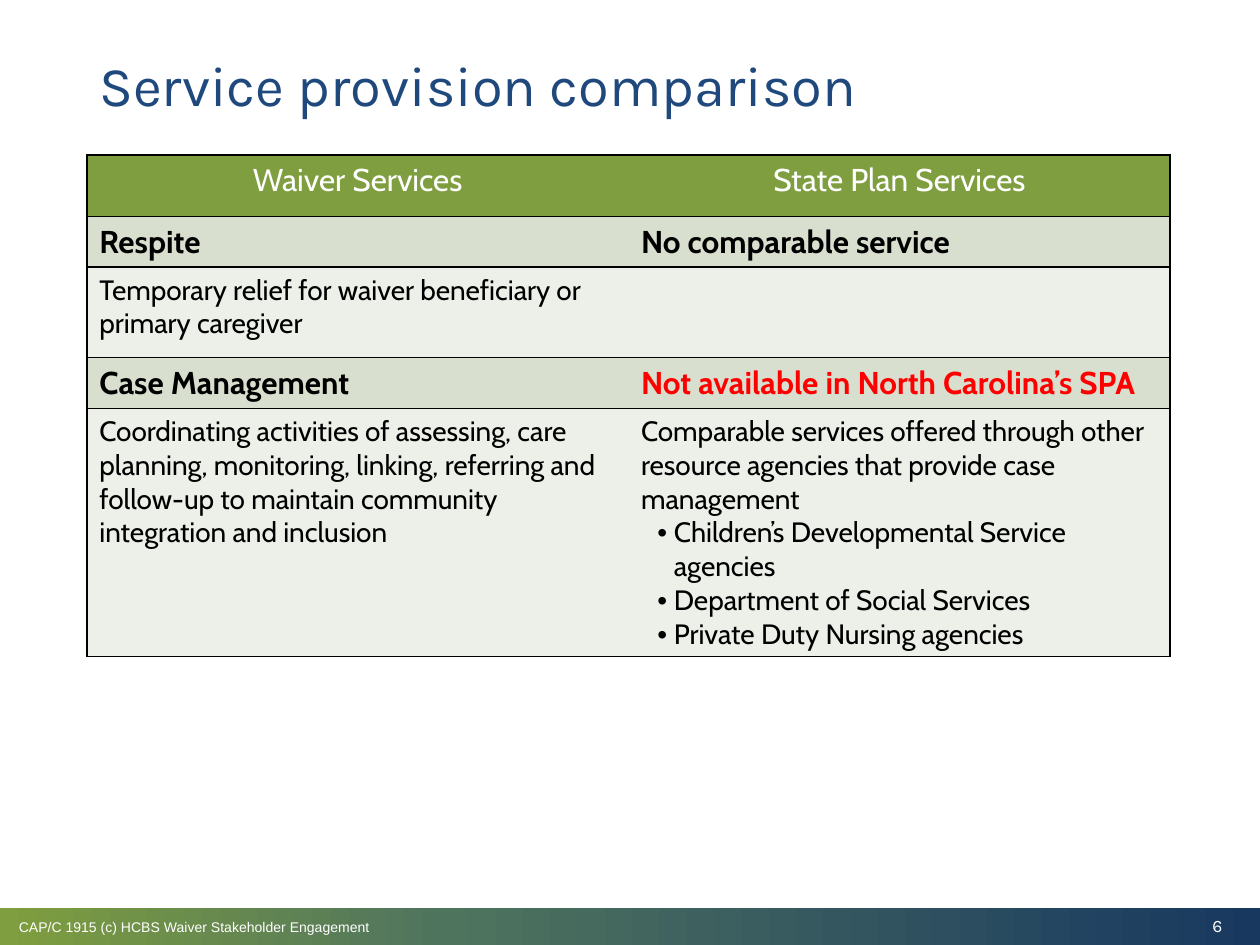
from copy import deepcopy
from dataclasses import dataclass

from lxml import etree
from pptx import Presentation
from pptx.dml.color import RGBColor
from pptx.enum import shapes, text
from pptx.oxml import ns
from pptx.util import Cm, Pt


@dataclass(frozen=True)
class Theme:
    white: str = "FFFFFF"
    black: str = "000000"
    red: str = "FF0000"
    blue: str = "1F497D"
    green: str = "7F9E3F"
    sage: str = "D8DFCF"
    pale: str = "ECF0E8"
    fade: tuple = ((0, "7F9E3F"), (0.35, "4F745E"), (1, "183860"))
    head: str = "Karla"
    body: str = "Cabin"
    foot: str = "Arial"
    title: int = 32
    large: int = 18
    small: int = 16
    page: int = 10
    note: int = 8


T = Theme()


@dataclass(frozen=True)
class Style:
    size: int
    font: str
    color: str
    bold: bool = False


@dataclass(frozen=True)
class Line:
    words: str
    style: Style
    align: text.PP_ALIGN = text.PP_ALIGN.LEFT
    bullet: bool = False


@dataclass(frozen=True)
class Row:
    height: float
    fill: str
    cells: tuple


@dataclass(frozen=True)
class Label:
    box: tuple
    line: Line
    anchor: text.MSO_ANCHOR


HEAD = Style(T.large, T.body, T.white)
NAME = Style(T.large, T.body, T.black, True)
ALERT = Style(T.large, T.body, T.red, True)
BODY = Style(T.small, T.body, T.black)
MID = text.PP_ALIGN.CENTER

ROWS = (
    Row(1.24, T.green, ((Line("Waiver Services", HEAD, MID),),
                        (Line("State Plan Services", HEAD, MID),))),
    Row(1.02, T.sage, ((Line("Respite", NAME),),
                       (Line("No comparable service", NAME),))),
    Row(1.83, T.pale, ((Line("Temporary relief for waiver beneficiary or primary caregiver", BODY),),
                       ())),
    Row(1.02, T.sage, ((Line("Case Management", NAME),),
                       (Line("Not available in North Carolina’s SPA", ALERT),))),
    Row(5, T.pale, (
        (Line("Coordinating activities of assessing, care planning, monitoring, linking, "
              "referring and follow-up to maintain community integration and inclusion", BODY),),
        (Line("Comparable services offered through other resource agencies "
              "that provide case management", BODY),
         Line("Children’s Developmental Service agencies", BODY, bullet=True),
         Line("Department of Social Services", BODY, bullet=True),
         Line("Private Duty Nursing agencies", BODY, bullet=True)))),
)

LABELS = (
    Label((19.18, 18.47, 5.71, 0.38),
          Line("6", Style(T.page, T.head, T.white), text.PP_ALIGN.RIGHT), text.MSO_ANCHOR.MIDDLE),
    Label((0.13, 18.39, 19.96, 0.61),
          Line("CAP/C 1915 (c) HCBS Waiver Stakeholder Engagement",
               Style(T.note, T.foot, T.white)), text.MSO_ANCHOR.TOP),
)


def place(box: tuple) -> list:
    return [Cm(v) for v in box]


def write(frame, lines: tuple) -> None:
    for i, line in enumerate(lines):
        para = frame.add_paragraph() if i else frame.paragraphs[0]
        para.alignment = line.align
        if line.bullet:
            props = para._p.get_or_add_pPr()
            props.set("marL", str(Cm(0.66)))
            props.set("indent", str(Cm(-0.33)))
            etree.SubElement(props, ns.qn("a:buFont")).set("typeface", T.foot)
            etree.SubElement(props, ns.qn("a:buChar")).set("char", "•")
        run = para.add_run()
        run.text = line.words
        font = run.font
        font.size, font.name, font.bold = Pt(line.style.size), line.style.font, line.style.bold
        font.color.rgb = RGBColor.from_string(line.style.color)


def border(cell, shown: str) -> None:
    props = cell._tc.get_or_add_tcPr()
    for side in "LRTB":
        edge = etree.SubElement(props, ns.qn(f"a:ln{side}"))
        edge.set("w", str(Pt(1)))
        if side in shown:
            fill = etree.SubElement(edge, ns.qn("a:solidFill"))
            etree.SubElement(fill, ns.qn("a:srgbClr")).set("val", T.black)
        else:
            etree.SubElement(edge, ns.qn("a:noFill"))


def draw_bar(slide) -> None:
    bar = slide.shapes.add_shape(shapes.MSO_SHAPE.RECTANGLE, *place((0, 18.31, 25.4, 0.76)))
    bar.shadow.inherit = False
    bar.line.fill.background()
    bar.fill.gradient()
    bar.fill.gradient_angle = 0
    stops = bar._element.spPr.find(".//" + ns.qn("a:gsLst"))
    stops.append(deepcopy(stops[0]))
    for stop, (spot, color) in zip(bar.fill.gradient_stops, T.fade):
        stop.position = spot
        stop.color.rgb = RGBColor.from_string(color)


def draw_title(slide) -> None:
    title = slide.shapes.title
    title.left, title.top, title.width, title.height = place((1.75, 0.23, 21.84, 2.29))
    frame = title.text_frame
    frame.word_wrap = True
    frame.auto_size = text.MSO_AUTO_SIZE.NONE
    frame.vertical_anchor = text.MSO_ANCHOR.BOTTOM
    write(frame, (Line("Service provision comparison", Style(T.title, T.head, T.blue)),))
    para = frame.paragraphs[0]
    para.line_spacing, para.space_before = 0.9, Pt(7.5)


def draw_label(slide, label: Label) -> None:
    frame = slide.shapes.add_textbox(*place(label.box)).text_frame
    frame.word_wrap = True
    frame.vertical_anchor = label.anchor
    write(frame, (label.line,))


def draw_table(slide, rows: tuple) -> None:
    high = sum(row.height for row in rows)
    table = slide.shapes.add_table(len(rows), 2, *place((1.75, 3.12, 21.84, high))).table
    table.first_row = table.horz_banding = False
    for r, row in enumerate(rows):
        table.rows[r].height = Cm(row.height)
        for c, lines in enumerate(row.cells):
            cell = table.cell(r, c)
            border(cell, "RTB" if c else "LTB")
            cell.fill.solid()
            cell.fill.fore_color.rgb = RGBColor.from_string(row.fill)
            write(cell.text_frame, lines)


def main() -> None:
    deck = Presentation()
    deck.slide_width, deck.slide_height = Cm(25.4), Cm(19.05)
    slide = deck.slides.add_slide(deck.slide_layouts[5])
    draw_bar(slide)
    draw_title(slide)
    for label in LABELS:
        draw_label(slide, label)
    draw_table(slide, ROWS)
    deck.save("out.pptx")


if __name__ == "__main__":
    main()
